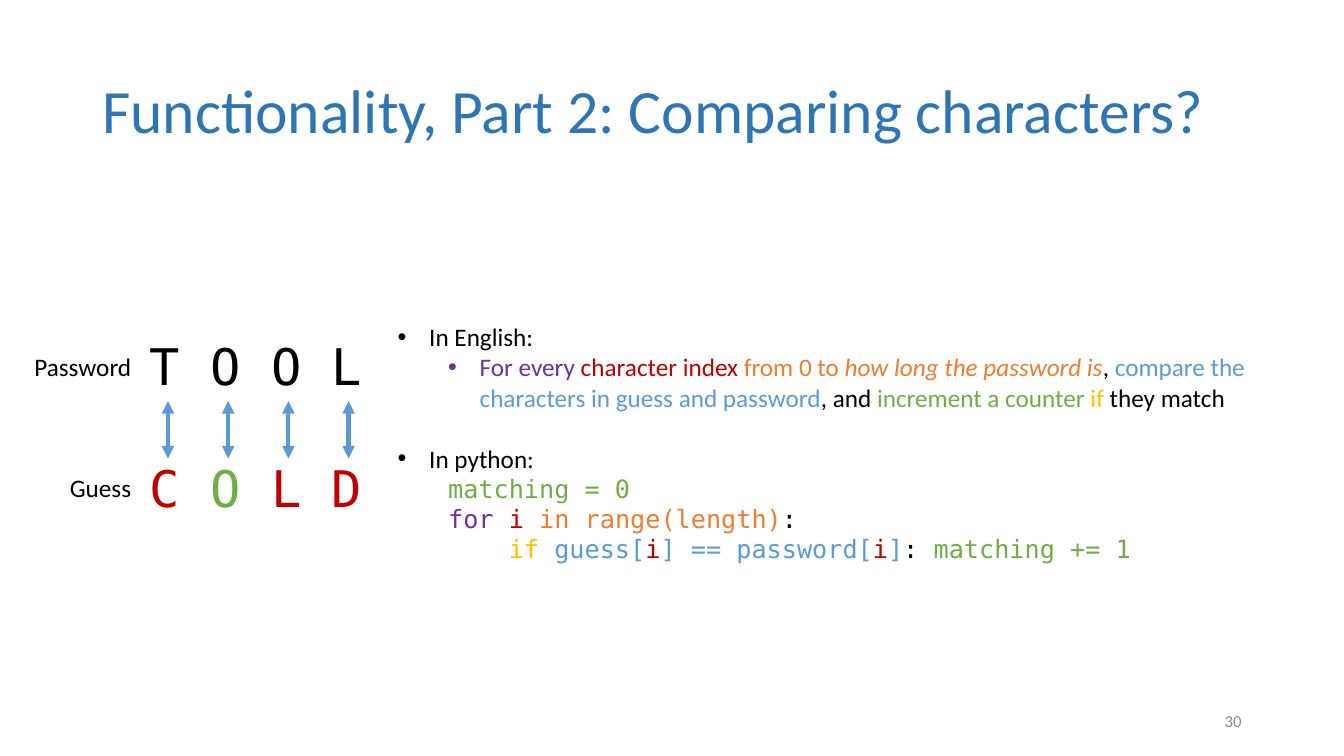
import lxml.etree
import pptx
import pptx.dml.color
import pptx.enum.shapes
import pptx.enum.text
import pptx.oxml.ns
import pptx.util

Pt = pptx.util.Pt
qn = pptx.oxml.ns.qn
ALIGN = pptx.enum.text.PP_ALIGN
ANCHOR = pptx.enum.text.MSO_ANCHOR

SANS, MONO = "Calibri", "DejaVu Sans Mono"
BLACK, GREY, TITLE_BLUE = "000000", "8C8C8C", "2E75B6"
PURPLE, RED, ORANGE = "7030A0", "C00000", "ED7D31"
BLUE, GREEN, YELLOW = "5B9BD5", "70AD47", "FFC000"


def rgb(color):
    """Turn a hex string into a colour."""
    return pptx.dml.color.RGBColor.from_string(color)


def add_element(parent, tag, **attributes):
    """Append a DrawingML element with the given attributes."""
    lxml.etree.SubElement(parent, qn(tag), attributes)


def add_box(s, left, top, width, height, anchor=ANCHOR.TOP):
    """Add a wrapping text box and return its text frame."""
    tf = s.shapes.add_textbox(Pt(left), Pt(top), Pt(width), Pt(height)).text_frame
    tf.word_wrap = True
    tf.vertical_anchor = anchor
    return tf


def write(p, parts, size, font=SANS, align=ALIGN.LEFT):
    """Fill a paragraph with (text, colour) parts, optionally marked italic."""
    p.alignment = align
    for text, color, *italic in parts:
        r = p.add_run()
        r.text = text
        r.font.size = Pt(size)
        r.font.name = font
        r.font.color.rgb = rgb(color)
        if italic:
            r.font.italic = True


def indent(p, margin, bullet=False):
    """Set the left margin, with a hanging bullet if wanted."""
    pPr = p._p.get_or_add_pPr()
    pPr.set("marL", str(Pt(margin)))
    pPr.set("indent", str(Pt(-22.5 if bullet else 0)))
    if bullet:
        add_element(pPr, "a:buFont", typeface="Arial")
        add_element(pPr, "a:buChar", char="•")


def add_label(s, text, top):
    """Add a right-aligned row label."""
    tf = add_box(s, 0, top, 100.8, 29)
    write(tf.paragraphs[0], [(text, BLACK)], 18, align=ALIGN.RIGHT)


def add_double_arrow(s, x, top, bottom):
    """Add a vertical line with an arrowhead at each end."""
    arrow = s.shapes.add_connector(
        pptx.enum.shapes.MSO_CONNECTOR.STRAIGHT, Pt(x), Pt(top), Pt(x), Pt(bottom))
    arrow.line.color.rgb = rgb(BLUE)
    arrow.line.width = Pt(3)
    spPr = arrow._element.find(qn("p:spPr"))
    ln = spPr.find(qn("a:ln"))
    add_element(ln, "a:headEnd", type="triangle")
    add_element(ln, "a:tailEnd", type="triangle")
    add_element(spPr, "a:effectLst")


def add_words(s):
    """Add the password over the guess, with arrows between letters."""
    tf = add_box(s, 100, 235.5, 178.5, 138)
    write(tf.paragraphs[0], [("T O O L", BLACK)], 36, MONO)
    p = tf.add_paragraph()
    p.space_before = Pt(44)
    write(p, [("C ", RED), ("O ", GREEN), ("L D", RED)], 36, MONO)
    for column in range(4):
        add_double_arrow(s, 120 + 43 * column, 286.5, 327.5)
    add_label(s, "Password", 247.5)
    add_label(s, "Guess", 334)


def add_explanation(s):
    """Add the English description and the matching Python code."""
    english = [
        ("For every ", PURPLE), ("character index", RED), (" from 0 to", ORANGE),
        (" how long the password is", ORANGE, True), (", ", BLACK),
        ("compare the characters in guess and password", BLUE), (", and ", BLACK),
        ("increment a counter", GREEN), (" if ", YELLOW), ("they match", BLACK)]
    loop = [("for ", PURPLE), ("i ", RED), ("in range(length)", ORANGE), (":", BLACK)]
    test = [
        ("if ", YELLOW), ("guess[", BLUE), ("i", RED), ("] == password[", BLUE),
        ("i", RED), ("]", BLUE), (": ", BLACK), ("matching += 1", GREEN)]
    rows = [
        ([("In English:", BLACK)], SANS, 22.5, True, 0),
        (english, SANS, 58.5, True, 0),
        ([("In python:", BLACK)], SANS, 22.5, True, 22),
        ([("matching = 0", GREEN)], MONO, 36, False, 0),
        (loop, MONO, 36, False, 0),
        (test, MONO, 79.35, False, 0)]
    tf = add_box(s, 277, 226, 641.5, 181.5)
    for number, (parts, font, margin, bullet, gap) in enumerate(rows):
        p = tf.add_paragraph() if number else tf.paragraphs[0]
        p.space_before = Pt(gap)
        indent(p, margin, bullet)
        write(p, parts, 18, font)


def main():
    """Build the slide and save it."""
    prs = pptx.Presentation()
    prs.slide_width, prs.slide_height = Pt(960), Pt(540)
    s = prs.slides.add_slide(prs.slide_layouts[6])

    p = add_box(s, 66, 28.75, 828, 104.4, ANCHOR.MIDDLE).paragraphs[0]
    p.line_spacing = 0.9
    write(p, [("Functionality, Part 2: Comparing characters?", TITLE_BLUE)], 44)

    p = add_box(s, 678, 500.5, 216, 28.75, ANCHOR.MIDDLE).paragraphs[0]
    write(p, [("30", GREY)], 12, align=ALIGN.RIGHT)

    add_explanation(s)
    add_words(s)
    prs.save("out.pptx")


if __name__ == "__main__":
    main()
